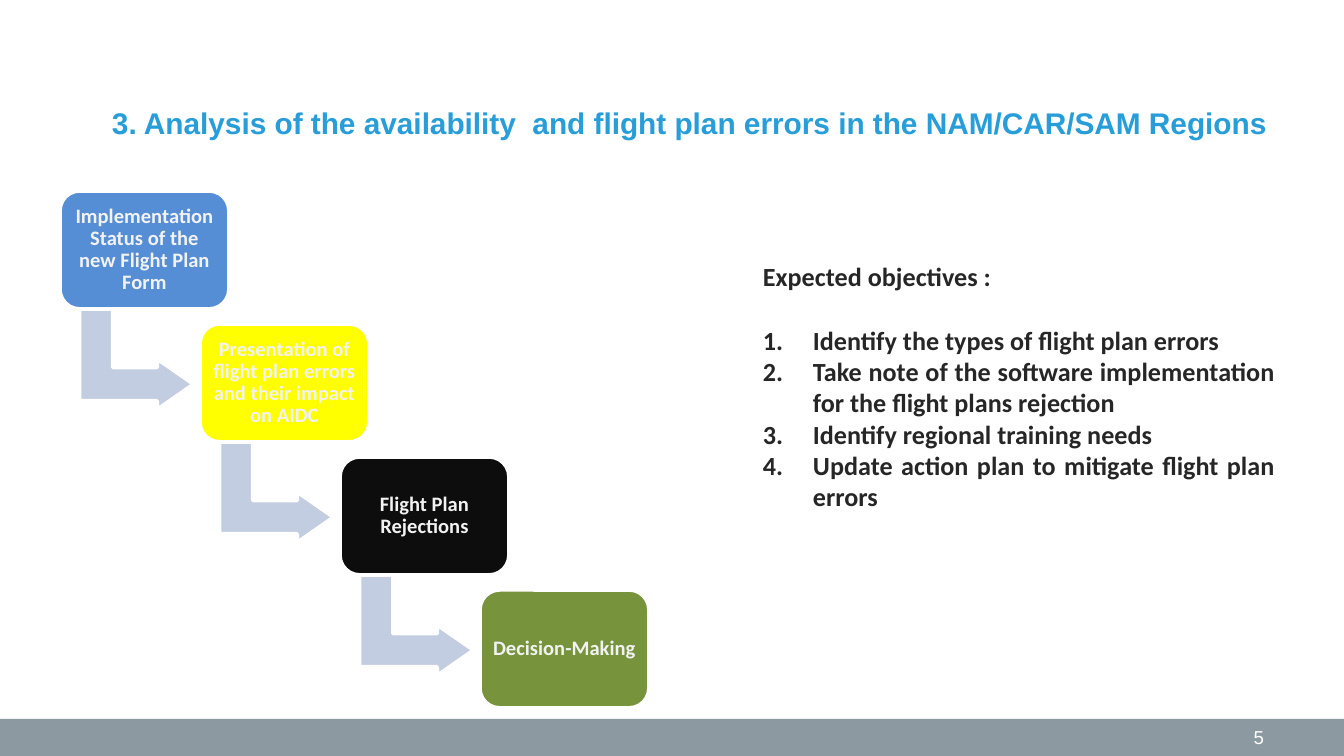
from lxml.etree import SubElement
from pptx import Presentation
from pptx.dml.color import RGBColor
from pptx.enum.shapes import MSO_SHAPE
from pptx.enum.text import MSO_ANCHOR, PP_ALIGN
from pptx.oxml.ns import qn
from pptx.util import Pt

EMU_PER_PX = 914400 / 134.4
SLIDE_SIZE = (1344, 756)
COLORS = {
    "title": "279DD9", "footer": "8C99A1", "white": "FFFFFF",
    "arrow": "C2CDE1", "step_text": "F2F2F2", "body": "262626",
    "blue": "558ED5", "yellow": "FFFF00", "black": "0D0D0D", "green": "77933C",
}
TITLE = ("3. Analysis of the availability  and flight plan errors "
         "in the NAM/CAR/SAM Regions")
STEPS = [
    ("Implementation Status of the new Flight Plan Form", "blue"),
    ("Presentation of flight plan errors and their impact on AIDC", "yellow"),
    ("Flight Plan Rejections", "black"),
    ("Decision-Making", "green"),
]
OBJECTIVES = [
    "Identify the types of flight plan errors",
    "Take note of the software implementation for the flight plans rejection",
    "Identify regional training needs",
    "Update action plan to mitigate flight plan errors",
]
STEP_LEFT, STEP_TOP = 60, 191
STEP_RIGHT, STEP_DOWN = 140, 133


def px(length):
    return round(length * EMU_PER_PX)


def color(name):
    return RGBColor.from_string(COLORS[name])


def number_paragraph(paragraph, indent):
    properties = paragraph._p.get_or_add_pPr()
    properties.set("marL", str(px(indent)))
    properties.set("indent", str(-px(indent)))
    SubElement(properties, qn("a:buFont"), typeface="+mj-lt")
    SubElement(properties, qn("a:buAutoNum"), type="arabicPeriod")


def write(holder, text, *, size, ink, font="Calibri", bold=True,
          align=PP_ALIGN.CENTER, anchor=MSO_ANCHOR.MIDDLE,
          margins=(13, 7, 13, 7), spacing=None, before=0, number_indent=0,
          append=False):
    """Write one paragraph, as the first of its holder unless append is set."""
    frame = holder.text_frame
    frame.word_wrap = True
    frame.vertical_anchor = anchor
    (frame.margin_left, frame.margin_top,
     frame.margin_right, frame.margin_bottom) = map(px, margins)
    paragraph = frame.add_paragraph() if append else frame.paragraphs[0]
    paragraph.alignment = align
    if spacing:
        paragraph.line_spacing = spacing
    if before:
        paragraph.space_before = Pt(before)
    if number_indent:
        number_paragraph(paragraph, number_indent)
    run = paragraph.add_run()
    run.text = text
    run.font.name = font
    run.font.size = Pt(size)
    run.font.bold = bold
    run.font.color.rgb = color(ink)


def add_text_box(slide, *box):
    return slide.shapes.add_textbox(*map(px, box))


def add_block(slide, preset, fill, *box, outlined=True):
    block = slide.shapes.add_shape(preset, *map(px, box))
    block.shadow.inherit = False
    block.fill.solid()
    block.fill.fore_color.rgb = color(fill)
    if outlined:
        block.line.color.rgb = color("white")
        block.line.width = Pt(2)
    else:
        block.line.fill.background()
    return block


def add_step_arrow(slide, left, top):
    arrow = add_block(slide, MSO_SHAPE.BENT_UP_ARROW, "arrow",
                      left, top, 101, 114)
    arrow.rotation = 90
    for index, value in enumerate((0.33, 0.25, 0.36)):
        arrow.adjustments[index] = value


def add_steps(slide):
    for index, (label, fill) in enumerate(STEPS):
        left = STEP_LEFT + index * STEP_RIGHT
        top = STEP_TOP + index * STEP_DOWN
        if index < len(STEPS) - 1:
            add_step_arrow(slide, left + 26, top + 111)
        step = add_block(slide, MSO_SHAPE.ROUNDED_RECTANGLE, fill,
                         left, top, 169, 118)
        write(step, label, size=11, ink="step_text", spacing=0.9,
              margins=(5, 7, 5, 7))


def add_objectives(slide):
    objectives = add_text_box(slide, 750, 210, 538, 425)
    style = {"size": 14, "ink": "body", "align": PP_ALIGN.JUSTIFY,
             "margins": (13, 7, 13, 79)}
    write(objectives, "Expected objectives :", **style)
    for index, objective in enumerate(OBJECTIVES):
        write(objectives, objective, append=True, number_indent=50,
              before=0 if index else 17, **style)


def add_footer(slide):
    add_block(slide, MSO_SHAPE.RECTANGLE, "footer", 0, 719, 1344, 37,
              outlined=False)
    page_number = add_text_box(slide, 964, 719, 313, 37)
    write(page_number, "5", size=10, ink="white", font="Arial", bold=False,
          align=PP_ALIGN.RIGHT)


def main():
    deck = Presentation()
    deck.slide_width, deck.slide_height = map(px, SLIDE_SIZE)
    slide = deck.slides.add_slide(deck.slide_layouts[6])
    add_footer(slide)
    title = add_text_box(slide, 85, 98, 1210, 126)
    write(title, TITLE, size=16, ink="title", font="Arial",
          anchor=MSO_ANCHOR.TOP)
    add_steps(slide)
    add_objectives(slide)
    deck.save("out.pptx")


if __name__ == "__main__":
    main()
